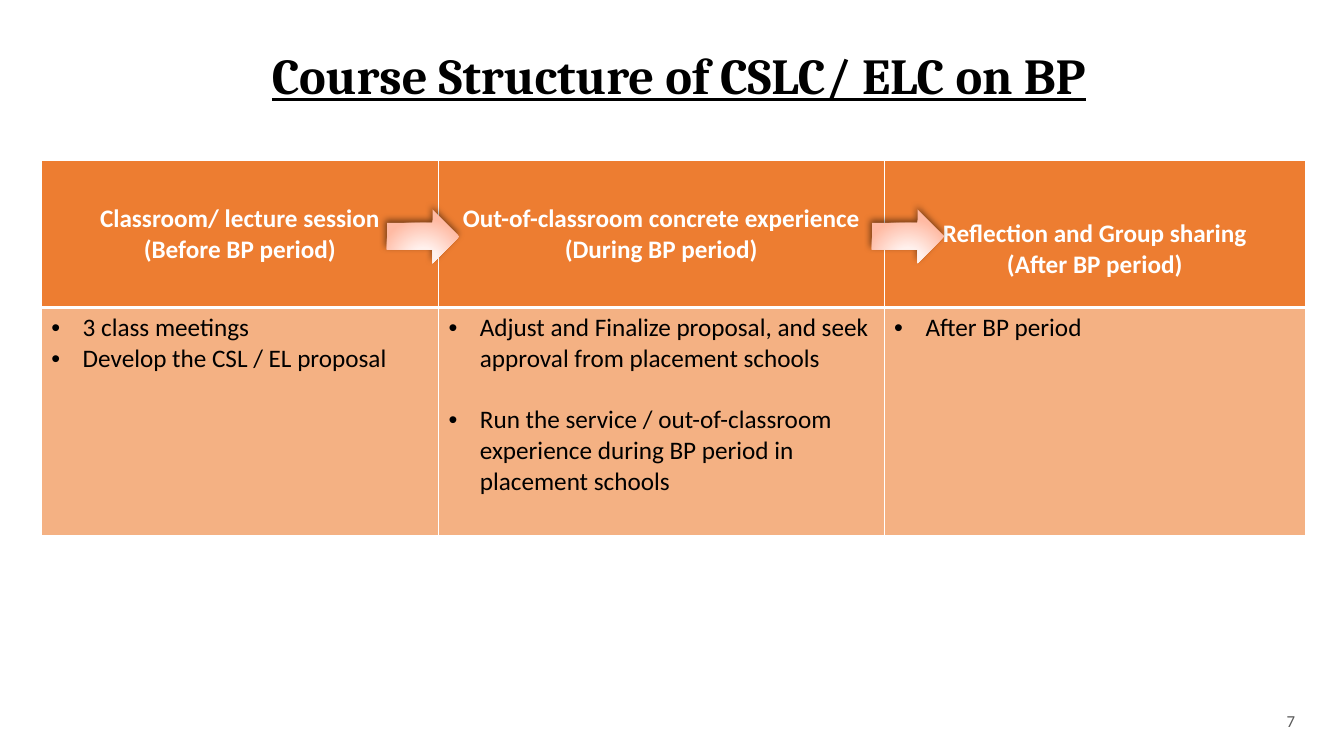
from dataclasses import dataclass

from lxml import etree
from pptx import Presentation
from pptx.dml.color import RGBColor
from pptx.enum import shapes, text
from pptx import util as u

COLORS = {
    "black": "000000", "white": "FFFFFF", "grey": "595959",
    "header": "ED7D31", "body": "F4B183",
    "arrow_light": "FFF5F2", "arrow_mid": "FFF1ED", "arrow_dark": "FFBAA3",
}
NS = 'xmlns:a="http://schemas.openxmlformats.org/drawingml/2006/main"'
MIDDLE = text.MSO_ANCHOR.MIDDLE
CENTER = text.PP_ALIGN.CENTER
LEFT, TABLE_TOP = 1.04, 4.04
ROW_HEIGHTS = (3.71, 5.74)


@dataclass
class Stage:
    width: float
    heading: tuple[str, ...]
    steps: tuple[str, ...]
    heading_margin: float = 0.13
    step_gap: float = 0


STAGES = [
    Stage(10.01, ("Classroom/ lecture session", "(Before BP period)"),
          ("3 class meetings", "Develop the CSL / EL proposal")),
    Stage(11.23, ("Out-of-classroom concrete experience", "(During BP period)"),
          ("Adjust and Finalize proposal, and seek approval from placement schools",
           "Run the service / out-of-classroom experience during BP period in "
           "placement schools"), step_gap=22),
    Stage(10.62, ("Reflection and Group sharing", "(After BP period)"),
          ("After BP period",), heading_margin=0.9),
]
ARROW_LEFTS = (9.75, 21.97)


def color(name: str) -> RGBColor:
    return RGBColor.from_string(COLORS[name])


def write(frame, *lines: str, size: float = 18, ink: str = "black",
          font: str = "Calibri", bold: bool = False, underline: bool = False,
          align=text.PP_ALIGN.LEFT, bullet: bool = False, gap: float = 0) -> None:
    """Fill a text frame, one paragraph for each line."""
    frame.word_wrap = True
    for index, line in enumerate(lines):
        para = frame.paragraphs[0] if index == 0 else frame.add_paragraph()
        if bullet:
            props = para._p.get_or_add_pPr()
            props.set("marL", str(u.Cm(0.79)))
            props.set("indent", str(u.Cm(-0.79)))
            props.append(etree.fromstring(f'<a:buFont {NS} typeface="Arial"/>'))
            props.append(etree.fromstring(f'<a:buChar {NS} char="•"/>'))
        para.alignment = align
        if index and gap:
            para.space_before = u.Pt(gap)
        span = para.add_run()
        span.text = line
        span.font.size = u.Pt(size)
        span.font.name = font
        span.font.bold = bold
        span.font.underline = underline
        span.font.color.rgb = color(ink)


def style_cell(cell, fill: str, top: float, bottom: float) -> None:
    """Set the fill and the white borders, widths in points."""
    cell.fill.solid()
    cell.fill.fore_color.rgb = color(fill)
    props = cell._tc.get_or_add_tcPr()
    edges = {"lnL": 1, "lnR": 1, "lnT": top, "lnB": bottom}
    for index, (edge, width) in enumerate(edges.items()):
        props.insert(index, etree.fromstring(
            f'<a:{edge} {NS} w="{u.Pt(width)}"><a:solidFill>'
            f'<a:srgbClr val="{COLORS["white"]}"/></a:solidFill></a:{edge}>'))


def add_stage_table(page) -> None:
    width = sum(stage.width for stage in STAGES)
    table = page.shapes.add_table(
        2, len(STAGES), u.Cm(LEFT), u.Cm(TABLE_TOP),
        u.Cm(width), u.Cm(sum(ROW_HEIGHTS))).table
    table.first_row = table.horz_banding = False
    for row, height in zip(table.rows, ROW_HEIGHTS):
        row.height = u.Cm(height)
    for index, stage in enumerate(STAGES):
        table.columns[index].width = u.Cm(stage.width)
        header, body = table.cell(0, index), table.cell(1, index)
        style_cell(header, "header", top=1, bottom=3)
        header.vertical_anchor = MIDDLE
        header.margin_top = u.Cm(stage.heading_margin)
        write(header.text_frame, *stage.heading, ink="white", bold=True, align=CENTER)
        style_cell(body, "body", top=3, bottom=1)
        write(body.text_frame, *stage.steps, bullet=True, gap=stage.step_gap)


def add_stage_arrow(page, left: float) -> None:
    arrow = page.shapes.add_shape(shapes.MSO_SHAPE.RIGHT_ARROW, u.Cm(left),
                                  u.Cm(5.28), u.Cm(1.83), u.Cm(1.35))
    arrow.line.fill.background()
    arrow.shadow.inherit = False
    props = arrow._element.spPr
    stops = "".join(
        f'<a:gs pos="{place * 1000}"><a:srgbClr val="{COLORS[name]}"/></a:gs>'
        for place, name in ((0, "arrow_light"), (34, "arrow_mid"), (100, "arrow_dark")))
    # The gradient follows the geometry; the shadow goes in the effect list
    props.insert(2, etree.fromstring(
        f'<a:gradFill {NS} rotWithShape="1"><a:gsLst>{stops}</a:gsLst>'
        '<a:path path="circle"><a:fillToRect l="50000" t="155000" r="50000" '
        'b="-55000"/></a:path></a:gradFill>'))
    props.find("{*}effectLst").append(etree.fromstring(
        f'<a:outerShdw {NS} blurRad="{u.Pt(5)}" dist="{u.Pt(2)}" '
        f'dir="{245 * 60000}" rotWithShape="0"><a:srgbClr val="{COLORS["black"]}">'
        '<a:alpha val="50000"/></a:srgbClr></a:outerShdw>'))


def main() -> None:
    deck = Presentation()
    deck.slide_width, deck.slide_height = u.Cm(33.87), u.Cm(19.05)
    page = deck.slides.add_slide(deck.slide_layouts[5])

    # Title
    title = page.shapes.title
    title.left, title.top = u.Cm(LEFT), u.Cm(0.03)
    title.width, title.height = u.Cm(32.13), u.Cm(3.68)
    title.text_frame.vertical_anchor = MIDDLE
    write(title.text_frame, "Course Structure of CSLC/ ELC on BP", size=36,
          font="Cambria", bold=True, underline=True, align=CENTER)

    # Page number
    box = page.shapes.add_textbox(u.Cm(23.8), u.Cm(17.65), u.Cm(9.09), u.Cm(1.02))
    box.text_frame.vertical_anchor = MIDDLE
    write(box.text_frame, "7", size=12, ink="grey", align=text.PP_ALIGN.RIGHT)

    # Stages and the arrows between them
    add_stage_table(page)
    for left in ARROW_LEFTS:
        add_stage_arrow(page, left)

    deck.save("out.pptx")


if __name__ == "__main__":
    main()
